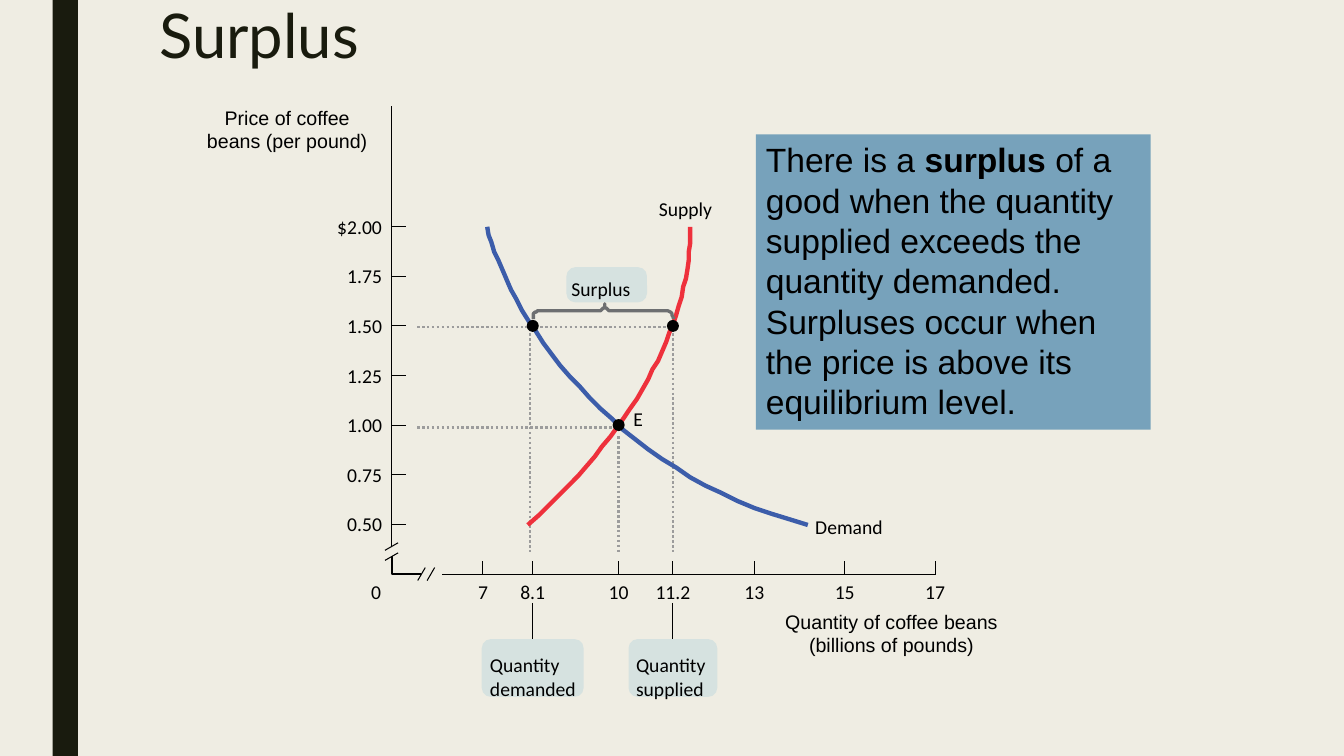
import pptx
import pptx.dml.color
import pptx.enum.dml
import pptx.enum.shapes
import pptx.enum.text
import pptx.oxml
import pptx.oxml.ns
import pptx.util

Pt = pptx.util.Pt
KIND = pptx.enum.shapes.MSO_SHAPE
ALIGN = pptx.enum.text.PP_ALIGN
LINK = pptx.enum.shapes.MSO_CONNECTOR
DOTS = pptx.enum.dml.MSO_LINE.ROUND_DOT
HEX = {"paper": "EFEDE3", "dark": "191B0E", "black": "000000", "panel": "77A2BB",
       "guide": "9C9C9C", "supply": "EE313C", "demand": "3C5DAA",
       "tag": "D6E2E0", "brace": "6D6F71"}
AXIS_X, AXIS_Y = 280, 410.4


def tint(name):
    return pptx.dml.color.RGBColor.from_string(HEX[name])


def at_qty(qty):
    return 345 + 32.3 * (qty - 7)


def at_price(price):
    return 162 + 141.6 * (2 - price)


def text(slide, runs, x, y, w, h, size=14, font="Calibri", color="black",
         align=ALIGN.LEFT, inset=(0, 0), fill=None, leading=None):
    """Add a text box; runs is a string or a list of (string, bold) pairs."""
    box = slide.shapes.add_textbox(Pt(x), Pt(y), Pt(w), Pt(h))
    if fill:
        box.fill.solid()
        box.fill.fore_color.rgb = tint(fill)
    frame = box.text_frame
    frame.word_wrap = True
    frame.margin_left = frame.margin_right = Pt(inset[0])
    frame.margin_top = frame.margin_bottom = Pt(inset[1])
    para = frame.paragraphs[0]
    para.alignment = align
    if leading:
        para.line_spacing = leading
    for part, bold in [(runs, False)] if isinstance(runs, str) else runs:
        run = para.add_run()
        run.text = part
        run.font.size, run.font.name, run.font.bold = Pt(size), font, bold
        run.font.color.rgb = tint(color)


def line(slide, x1, y1, x2, y2, color="black", width=0.75, dash=None):
    link = slide.shapes.add_connector(LINK.STRAIGHT, Pt(x1), Pt(y1), Pt(x2), Pt(y2))
    link.line.color.rgb = tint(color)
    link.line.width = Pt(width)
    if dash:
        link.line.dash_style = dash
    props = link._element.spPr
    props.append(pptx.oxml.parse_xml(
        "<a:effectLst %s/>" % pptx.oxml.ns.nsdecls("a")))
    return link


def solid(slide, kind, x, y, w, h, color):
    shape = slide.shapes.add_shape(kind, Pt(x), Pt(y), Pt(w), Pt(h))
    shape.shadow.inherit = False
    shape.fill.solid()
    shape.fill.fore_color.rgb = tint(color)
    shape.line.fill.background()
    return shape


def tag(slide, x, y, w, h):
    shape = solid(slide, KIND.ROUNDED_RECTANGLE, x, y, w, h, "tag")
    shape.adjustments[0] = 6.5 / min(w, h)
    return shape


def dot(slide, qty, price):
    solid(slide, KIND.OVAL, at_qty(qty) - 4.3, at_price(price) - 4.3, 8.6, 8.6, "black")


def trace(slide, points, color, width):
    """Draw an open outline through the points."""
    pen = slide.shapes.build_freeform(*points[0], scale=Pt(1))
    pen.add_line_segments(points[1:], close=False)
    shape = pen.convert_to_shape()
    shape.shadow.inherit = False
    shape.fill.background()
    shape.line.color.rgb = tint(color)
    shape.line.width = Pt(width)


def bezier(a, b, c, d, steps=32):
    points = []
    for i in range(steps + 1):
        t = i / steps
        u = 1 - t
        points.append(tuple(u**3 * p + 3 * u * u * t * q + 3 * u * t * t * r + t**3 * s
                            for p, q, r, s in zip(a, b, c, d)))
    return points


def axes(slide):
    line(slide, AXIS_X, 391, AXIS_X, 75.6)
    trace(slide, [(301, AXIS_Y), (AXIS_X, AXIS_Y), (AXIS_X, 397.4)], "black", 0.75)
    line(slide, at_qty(17), AXIS_Y, 315.4, AXIS_Y)
    for y in (393.1, 400.3):
        line(slide, 275, y, 284.4, y - 5.4)
    for x in (303.8, 310.5):
        line(slide, x, 405.4, x - 5.4, 414.7)
    for i in range(7):
        price = 2 - i / 4
        y = at_price(price)
        line(slide, AXIS_X, y, AXIS_X + 10, y)
        mark = f"{price:.2f}" if i else f"${price:.2f}"
        text(slide, mark, 222.9, y - 8.6, 50, 17, align=ALIGN.RIGHT)
    for qty in (7, 8.1, 10, 11.2, 13, 15, 17):
        x = at_qty(qty)
        line(slide, x, AXIS_Y, x, AXIS_Y - 10)
        text(slide, str(qty), x - 20, 414, 40, 17, align=ALIGN.CENTER)
    text(slide, "0", 265, 414, 10, 17)


def guides(slide):
    for x, top in ((378.7, 234.7), (at_qty(11.2), 234.7), (at_qty(10), 311.8)):
        line(slide, x, top, x, 395.3, "guide", 1.75, DOTS)
    for y, qty in ((233.6, 11.2), (305.3, 10)):
        line(slide, 298, y, at_qty(qty), y, "guide", 1.75, DOTS)


def curves(slide):
    trace(slide, bezier((493.2, 162), (493.2, 226.1), (460.1, 300.2), (377.3, 375)),
          "supply", 3.13)
    trace(slide, bezier((347.8, 162), (361.4, 219.6), (433.4, 338.4), (577.4, 375)),
          "demand", 3.13)
    text(slide, "Supply", 470.6, 140.6, 50, 17)
    text(slide, "Demand", 582.3, 368, 60, 17)
    text(slide, "E", 452.4, 291, 12, 17)


def brace(slide):
    left, mid, right = at_qty(8.1), 432, at_qty(11.2)
    foot, bar, tip = 228.2, 221.8, 217.4
    points = (bezier((left, foot), (left, 224), (left + 1.5, bar), (left + 7, bar), 8)
              + bezier((mid - 4, bar), (mid - 3, bar), (mid, 221), (mid, tip), 8)
              + bezier((mid, tip), (mid, 221), (mid + 3, bar), (mid + 4, bar), 8)
              + bezier((right - 7, bar), (right - 1, bar), (right, 224), (right, foot), 8))
    trace(slide, points, "brace", 2.38)


def quantity(slide, word, qty, width, left, wrap):
    """Add a tag under the axis and the line that leads to it."""
    x = at_qty(qty)
    box = tag(slide, x - width / 2, 456.5, width, 41.3)
    line(slide, x, 430.6, x, 456.5).end_connect(box, 0)
    text(slide, "Quantity " + word, left, 466.6, wrap, 34)


def main():
    deck = pptx.Presentation()
    deck.slide_width, deck.slide_height = Pt(960), Pt(540)
    slide = deck.slides.add_slide(deck.slide_layouts[6])
    slide.background.fill.solid()
    slide.background.fill.fore_color.rgb = tint("paper")
    solid(slide, KIND.RECTANGLE, 37.6, 0, 18, 540, "dark")
    text(slide, "Surplus", 106.8, 0.7, 756, 60, size=44, font="Lato", color="dark",
         inset=(7.2, 3.6), leading=0.89)
    text(slide, [("There is a ", False), ("surplus ", True),
                 ("of a good when the quantity supplied exceeds the quantity demanded. "
                  "Surpluses occur when the price is above its equilibrium level.", False)],
         540, 96, 282, 211, size=24, font="Arial", inset=(7.2, 3.6), fill="panel")
    guides(slide)
    axes(slide)
    curves(slide)
    tag(slide, 404.6, 190.8, 57.6, 25.2)
    text(slide, "Surplus", 408.2, 198, 52, 17)
    brace(slide)
    for qty, price in ((8.1, 1.5), (10, 1), (11.2, 1.5)):
        dot(slide, qty, price)
    quantity(slide, "demanded", 8.1, 72.8, 350, 78.5)
    quantity(slide, "supplied", 11.2, 63.4, 454.3, 59)
    for name, x, y, w in (("Price of coffee beans (per pound)", 138.2, 72, 134),
                          ("Quantity of coffee beans (billions of pounds)", 552.2, 432, 169.2)):
        text(slide, name, x, y, w, 41, font="Arial", align=ALIGN.CENTER, inset=(7.2, 3.6))
    deck.save("out.pptx")


if __name__ == "__main__":
    main()
